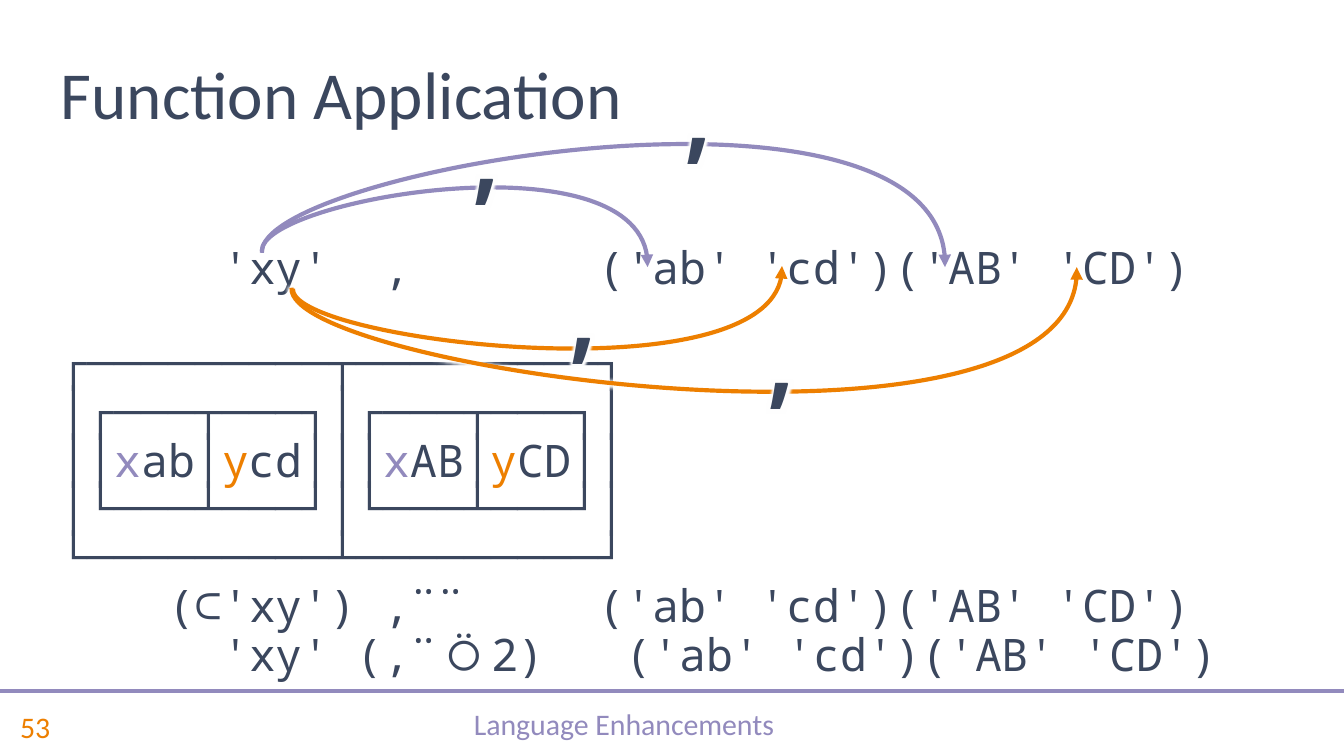
from lxml import etree
from pptx import Presentation
from pptx.dml.color import RGBColor
from pptx.enum.shapes import MSO_CONNECTOR
from pptx.enum.text import MSO_ANCHOR, PP_ALIGN
from pptx.oxml.ns import qn
from pptx.util import Cm, Pt

STRAIGHT = MSO_CONNECTOR.STRAIGHT
TOP, MIDDLE, BOTTOM = MSO_ANCHOR.TOP, MSO_ANCHOR.MIDDLE, MSO_ANCHOR.BOTTOM
LEFT, CENTER = PP_ALIGN.LEFT, PP_ALIGN.CENTER

THEME = {
    "ink": "3B475E", "violet": "928ABD", "orange": "ED7F00", "halo": "FFFFFF",
    "sans": "Calibri", "mono": "Noto Sans Mono",
    "title": 36, "code": 24, "comma": 48, "footer": 16,
    "line": 2.25, "comma_glow": 5,
}

# Content; all positions in cm
TITLE = "Function Application"
FOOTER = "Language Enhancements"
PAGE = "53"

EXPRESSION = ["      'xy'  ,       ('ab' 'cd')('AB' 'CD')"]
RESULT = [
    "┌─────────┬─────────┐",
    "│┌───┬───┐│┌───┬───┐│",
    [("││", "ink"), ("x", "violet"), ("ab│", "ink"), ("y", "orange"),
     ("cd│││", "ink"), ("x", "violet"), ("AB│", "ink"), ("y", "orange"),
     ("CD││", "ink")],
    "│└───┴───┘│└───┴───┘│",
    "└─────────┴─────────┘",
]
EQUIVALENTS = [
    "    (⊂'xy') ,¨¨     ('ab' 'cd')('AB' 'CD')",
    "      'xy' (,¨⍥2)   ('ab' 'cd')('AB' 'CD')",
]

# Colour, glow in points, then start, two control points, end
ARROWS = [
    ("violet", 0, [(4.95, 4.75), (4.9, 3.78), (12.32, 2.49), (12.24, 5.05)]),
    ("violet", 0, [(4.95, 4.78), (4.85, 3.23), (17.98, 0.94), (17.86, 5.05)]),
    ("orange", 2, [(5.51, 5.44), (5.38, 6.96), (20.52, 9.14), (20.35, 5.05)]),
    ("orange", 0, [(5.54, 5.46), (5.44, 6.43), (14.88, 7.59), (14.78, 5.03)]),
]
COMMAS = [(8.41, 1.8), (12.42, 1.02), (10.24, 4.8), (14, 5.66)]
COMMA_SIZE = (1.45, 2.31)

WIDTH, HEIGHT, RULE_Y = 25.4, 14.29, 13.06


def color(name):
    return RGBColor.from_string(THEME[name])


def add_text(s, box, lines, font, size, ink="ink", anchor=TOP, gaps=None,
             para=None, **style):
    """Lines are strings or (text, colour) runs; gaps maps line number to space before."""
    tf = s.shapes.add_textbox(*map(Cm, box)).text_frame
    tf.word_wrap = True
    tf.vertical_anchor = anchor
    for i, line in enumerate(lines):
        p = tf.paragraphs[0] if i == 0 else tf.add_paragraph()
        for name, value in (para or {}).items():
            setattr(p, name, value)
        if gaps and i in gaps:
            p.space_before = Pt(gaps[i])
        for text, tint in [(line, ink)] if isinstance(line, str) else line:
            r = p.add_run()
            r.text = text
            r.font.color.rgb = color(tint)
            fmt = {"name": THEME[font], "size": Pt(THEME[size]), **style}
            for name, value in fmt.items():
                setattr(r.font, name, value)
    return tf


def effects(radius):
    """Effect list with a glow, or an empty one that switches off the shadow."""
    effect_list = etree.Element(qn("a:effectLst"))
    if radius:
        halo = etree.SubElement(effect_list, qn("a:glow"), rad=str(Pt(radius)))
        etree.SubElement(halo, qn("a:srgbClr"), val=THEME["halo"])
    return effect_list


def bezier(points, t):
    weights = ((1 - t) ** 3, 3 * t * (1 - t) ** 2, 3 * t * t * (1 - t), t ** 3)
    return tuple(int(sum(w * v for w, v in zip(weights, axis)))
                 for axis in zip(*points))


def add_curved_arrow(s, tint, radius, points, steps=40):
    """Sampled points fix the bounds, then one cubic segment replaces them."""
    points = [(Cm(x), Cm(y)) for x, y in points]
    samples = [bezier(points, i / steps) for i in range(steps + 1)]
    builder = s.shapes.build_freeform(*samples[0])
    builder.add_line_segments(samples[1:], close=False)
    sp = builder.convert_to_shape()
    sp.fill.background()
    sp.line.color.rgb = color(tint)
    sp.line.width = Pt(THEME["line"])

    outline = sp._element.xpath(".//a:path")[0]
    for segment in outline.findall(qn("a:lnTo")):
        outline.remove(segment)
    curve = etree.SubElement(outline, qn("a:cubicBezTo"))
    for x, y in points[1:]:
        etree.SubElement(curve, qn("a:pt"), x=str(x - sp.left), y=str(y - sp.top))

    ln = sp._element.spPr.find(qn("a:ln"))
    etree.SubElement(ln, qn("a:tailEnd"), type="triangle")
    ln.addnext(effects(radius))


def add_comma(s, corner):
    tf = add_text(s, corner + COMMA_SIZE, [","], "mono", "comma", bold=True)
    rPr = tf.paragraphs[0].runs[0]._r.rPr
    rPr.find(qn("a:solidFill")).addnext(effects(THEME["comma_glow"]))


def add_footer(s):
    add_text(s, (1.98, 13.18, 19.63, 1.12), [FOOTER], "sans", "footer", "violet",
             MIDDLE, para={"alignment": CENTER, "line_spacing": 0.8})
    add_text(s, (0.13, 13.18, 1.85, 1.12), [PAGE], "sans", "footer", "orange", MIDDLE)
    rule = s.shapes.add_connector(STRAIGHT, 0, Cm(RULE_Y), Cm(WIDTH), Cm(RULE_Y))
    rule.line.color.rgb = color("violet")
    rule.line.width = Pt(THEME["line"])
    rule._element.spPr.append(effects(0))


def main():
    prs = Presentation()
    prs.slide_width, prs.slide_height = Cm(WIDTH), Cm(HEIGHT)
    s = prs.slides.add_slide(prs.slide_layouts[6])
    add_footer(s)
    add_text(s, (0.9, 4.53, 23.7, 9.5), EXPRESSION + RESULT + EQUIVALENTS,
             "mono", "code", gaps={len(EXPRESSION): 25.5},
             para={"alignment": LEFT, "line_spacing": 0.9})
    add_text(s, (0.9, 0.74, 19.46, 1.9), [TITLE], "sans", "title", anchor=BOTTOM)
    for tint, radius, points in ARROWS:
        add_curved_arrow(s, tint, radius, points)
    for corner in COMMAS:
        add_comma(s, corner)
    prs.save("out.pptx")


if __name__ == "__main__":
    main()
